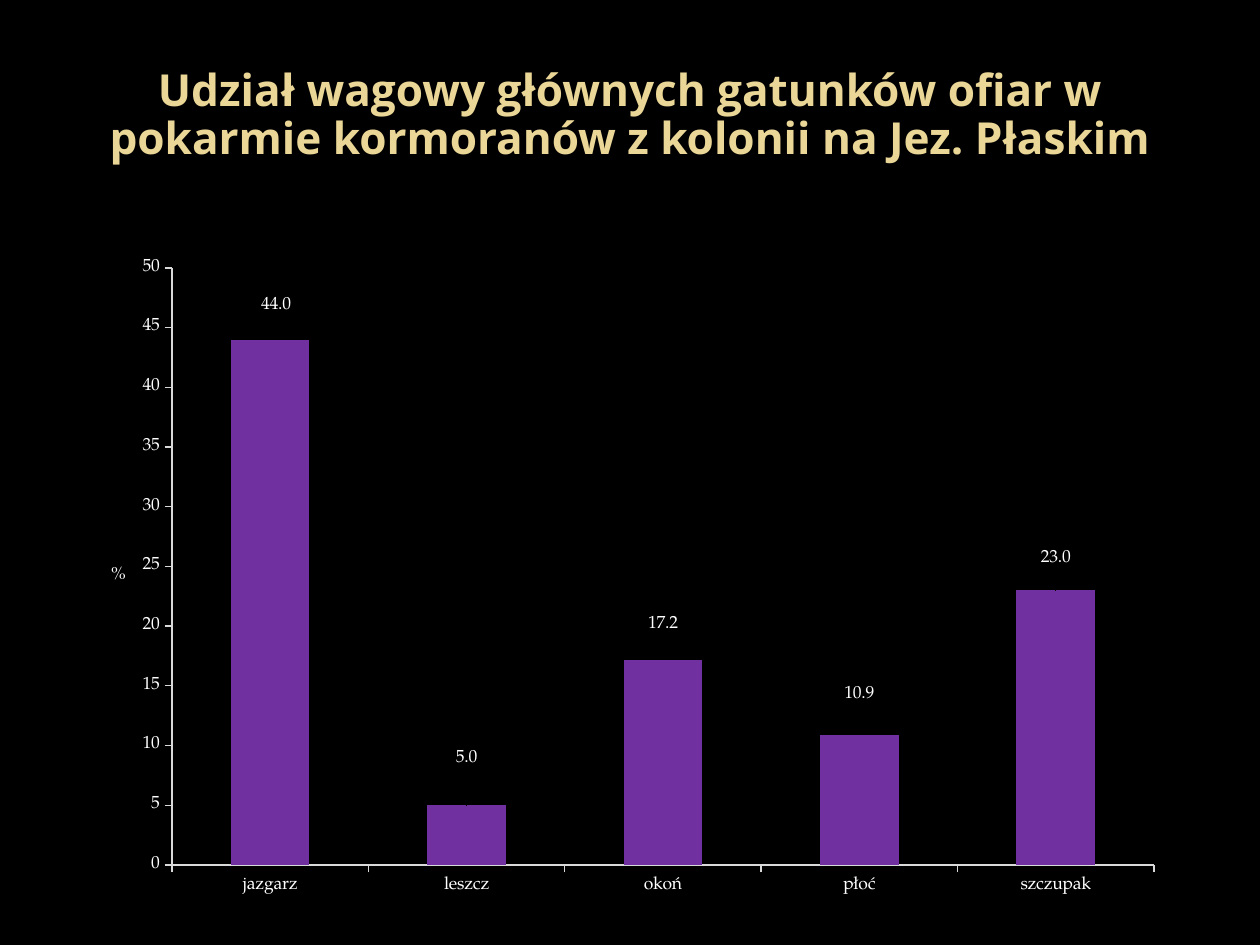
from lxml import etree
from pptx import Presentation
from pptx.chart.data import CategoryChartData
from pptx.dml.color import RGBColor
from pptx.enum.chart import XL_CHART_TYPE, XL_LABEL_POSITION, XL_TICK_MARK
from pptx.enum.text import MSO_ANCHOR, PP_ALIGN
from pptx.oxml.ns import qn
from pptx.util import Emu, Pt

COLUMNS = XL_CHART_TYPE.COLUMN_CLUSTERED
OUTSIDE = XL_TICK_MARK.OUTSIDE
NO_TICK = XL_TICK_MARK.NONE
OUTSIDE_END = XL_LABEL_POSITION.OUTSIDE_END
MIDDLE = MSO_ANCHOR.MIDDLE
CENTER = PP_ALIGN.CENTER

TITLE = "Udział wagowy głównych gatunków ofiar w pokarmie kormoranów z kolonii na Jez. Płaskim"
AXIS_TITLE = "%"
# species, share of weight, label shift (x, y) in px
SPECIES = [
    ("jazgarz", 44, (6, -20)),
    ("leszcz", 5, (0, -33)),
    ("okoń", 17.2, (0, -21)),
    ("płoć", 10.9, (0, -26)),
    ("szczupak", 23, (0, -18)),
]
COLORS = {
    "background": "000000",
    "title": "EAD696",
    "title_end": "E7D081",
    "text": "FFFFFF",
    "axis": "D9D9D9",
    "bar": "7030A0",
}
TITLE_FONT = "Open Sans"
CHART_FONT = "TeX Gyre Pagella"

SCALE = 914400 / 126
SLIDE_SIZE = (1260, 945)
TITLE_BOX = (63, 38, 1134, 157)
CHART_BOX = (94, 258, 1071, 650)
PLOT_BOX = (78, 10, 982, 597)  # inside the chart
AXIS_TITLE_AT = (14, 305)  # inside the chart


def px(value):
    return Emu(round(value * SCALE))


def color(name):
    return RGBColor.from_string(COLORS[name])


def style_font(font):
    font.name = CHART_FONT
    font.size = Pt(10)
    font.bold = False
    font.color.rgb = color("text")


def make_layout(box, **settings):
    """Return a c:layout whose px box is turned into fractions of the chart."""
    layout = etree.Element(qn("c:layout"))
    manual = etree.SubElement(layout, qn("c:manualLayout"))
    for tag, value in settings.items():
        etree.SubElement(manual, qn("c:" + tag)).set("val", value)
    for tag, value, whole in zip("xywh", box, CHART_BOX[2:] * 2):
        etree.SubElement(manual, qn("c:" + tag)).set("val", f"{value / whole:.4f}")
    return layout


def replace_layout(parent, layout, index):
    for old in parent.findall(qn("c:layout")):
        parent.remove(old)
    parent.insert(index, layout)


def add_title(slide):
    title = slide.shapes.title
    title.left, title.top, title.width, title.height = map(px, TITLE_BOX)
    frame = title.text_frame
    frame.word_wrap = True
    frame.vertical_anchor = MIDDLE
    paragraph = frame.paragraphs[0]
    paragraph.alignment = CENTER
    paragraph.line_spacing = 0.9
    run = paragraph.add_run()
    run.text = TITLE
    font = run.font
    font.name, font.size, font.bold = TITLE_FONT, Pt(25.2), True
    font.fill.gradient()
    font.fill.gradient_angle = 80
    stops = zip(font.fill.gradient_stops, ("title", "title_end"), (0.73, 1))
    for stop, name, position in stops:
        stop.color.rgb = color(name)
        stop.position = position


def style_axes(chart):
    value_axis = chart.value_axis
    value_axis.minimum_scale, value_axis.maximum_scale = 0, 50
    value_axis.major_unit = 5
    value_axis.has_major_gridlines = False
    value_axis.tick_labels.number_format = "0"
    value_axis.tick_labels.number_format_is_linked = False
    for axis in (chart.category_axis, value_axis):
        axis.major_tick_mark = OUTSIDE
        axis.minor_tick_mark = NO_TICK
        axis.format.line.color.rgb = color("axis")
        axis.format.line.width = Pt(0.75)
        style_font(axis.tick_labels.font)

    title = value_axis.axis_title
    frame = title.text_frame
    run = frame.paragraphs[0].add_run()
    run.text = AXIS_TITLE
    style_font(run.font)
    body = title._element.find(".//" + qn("a:bodyPr"))
    body.set("rot", "0")
    body.set("vert", "horz")
    replace_layout(title._element, make_layout(AXIS_TITLE_AT, xMode="edge", yMode="edge"), 1)


def style_bars(plot):
    plot.gap_width = 150
    plot.vary_by_categories = False
    series = plot.series[0]
    series.format.fill.solid()
    series.format.fill.fore_color.rgb = color("bar")
    labels = series.data_labels
    labels.show_value = True
    labels.number_format = "#,##0.0"
    labels.number_format_is_linked = False
    labels.position = OUTSIDE_END
    style_font(labels.font)
    for index, (_, _, shift) in enumerate(SPECIES):
        label = series.points[index].data_label
        style_font(label.font)
        label.position = OUTSIDE_END
        element = labels._element.findall(qn("c:dLbl"))[index]
        replace_layout(element, make_layout(shift), 1)


def add_chart(slide):
    data = CategoryChartData(number_format="#,##0.0")
    data.categories = [name for name, _, _ in SPECIES]
    data.add_series("Series 1", [share for _, share, _ in SPECIES])
    chart = slide.shapes.add_chart(COLUMNS, *map(px, CHART_BOX), data).chart
    chart.has_title = False
    chart.has_legend = False
    style_font(chart.font)
    style_axes(chart)
    style_bars(chart.plots[0])
    plot_area = chart._chartSpace.find(".//" + qn("c:plotArea"))
    layout = make_layout(PLOT_BOX, layoutTarget="inner", xMode="edge", yMode="edge")
    replace_layout(plot_area, layout, 0)


def main():
    presentation = Presentation()
    presentation.slide_width, presentation.slide_height = map(px, SLIDE_SIZE)
    slide = presentation.slides.add_slide(presentation.slide_layouts[5])
    slide.background.fill.solid()
    slide.background.fill.fore_color.rgb = color("background")
    add_title(slide)
    add_chart(slide)
    presentation.save("out.pptx")


if __name__ == "__main__":
    main()
